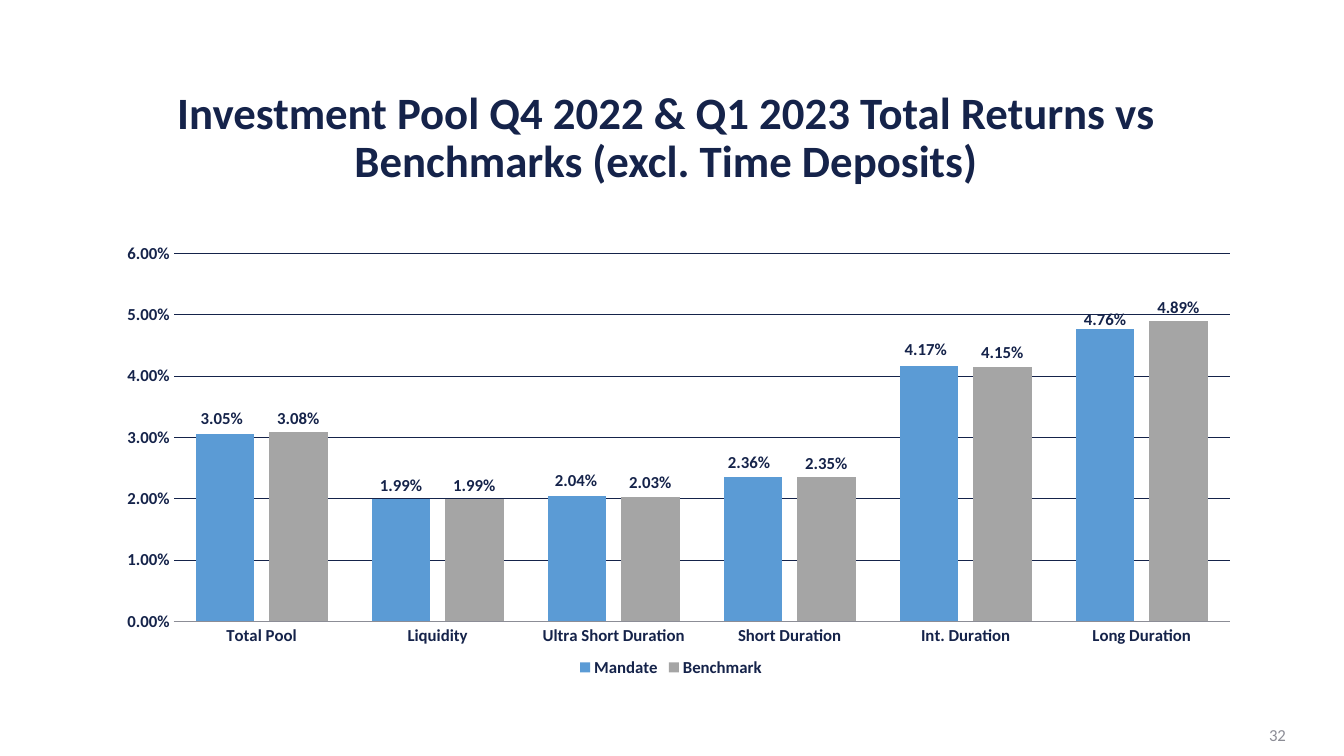
from dataclasses import dataclass

import lxml.etree
import pptx
import pptx.chart.data
import pptx.dml.color
import pptx.enum.chart
import pptx.enum.text
import pptx.oxml
import pptx.oxml.ns
import pptx.util

Cm = pptx.util.Cm
Pt = pptx.util.Pt


@dataclass(frozen=True)
class Theme:
    font: str = "Calibri"
    navy: str = "15234A"
    grey: str = "8C8D96"
    blue: str = "5B9BD5"
    silver: str = "A5A5A5"
    title_size: int = 32
    small_size: int = 12
    hairline: float = 0.5
    percent: str = "0.00%"


@dataclass(frozen=True)
class Box:
    left: float
    top: float
    width: float
    height: float

    def lengths(self):
        return Cm(self.left), Cm(self.top), Cm(self.width), Cm(self.height)


@dataclass(frozen=True)
class ReturnSeries:
    name: str
    color: str
    percents: tuple[float, ...]
    label_shifts: tuple[tuple[float, float], ...] = ()


THEME = Theme()
TITLE_BOX = Box(1.65, 1.91, 30.28, 3.18)
CHART_BOX = Box(2.57, 5.08, 28.68, 12.09)
NUMBER_BOX = Box(25.04, 18, 7.62, 1.02)
PLOT_AREA = {"x": 0.063, "y": 0.108, "w": 0.928, "h": 0.767}

MANDATES = ("Total Pool", "Liquidity", "Ultra Short Duration",
            "Short Duration", "Int. Duration", "Long Duration")
RETURNS = (
    ReturnSeries("Mandate", THEME.blue, (3.05, 1.99, 2.04, 2.36, 4.17, 4.76),
                 ((-0.08, -0.03), (0, 0), (-0.03, -0.03),
                  (-0.1, 0), (-0.08, -0.05), (0, 0.1))),
    ReturnSeries("Benchmark", THEME.silver, (3.08, 1.99, 2.03, 2.35, 4.15, 4.89)),
)


def rgb(color: str) -> pptx.dml.color.RGBColor:
    return pptx.dml.color.RGBColor.from_string(color)


def style_font(font, size: int, color: str, bold: bool) -> None:
    font.name = THEME.font
    font.size = Pt(size)
    font.bold = bold
    font.color.rgb = rgb(color)


def style_line(line, color: str) -> None:
    line.color.rgb = rgb(color)
    line.width = Pt(THEME.hairline)


def fill_text(shape, box: Box, text: str, size: int, color: str, bold: bool,
              alignment, line_spacing: float) -> None:
    shape.left, shape.top, shape.width, shape.height = box.lengths()
    frame = shape.text_frame
    frame.text = text
    frame.word_wrap = True
    frame.auto_size = pptx.enum.text.MSO_AUTO_SIZE.NONE
    frame.vertical_anchor = pptx.enum.text.MSO_ANCHOR.MIDDLE
    paragraph = frame.paragraphs[0]
    paragraph.alignment = alignment
    paragraph.line_spacing = line_spacing
    style_font(paragraph.runs[0].font, size, color, bold)


def manual_layout(values: dict[str, float], inner: bool = False):
    layout = pptx.oxml.parse_xml(
        f'<c:layout {pptx.oxml.ns.nsdecls("c")}><c:manualLayout/></c:layout>')
    settings = {"layoutTarget": "inner", "xMode": "edge", "yMode": "edge"} if inner else {}
    for tag, value in {**settings, **values}.items():
        item = lxml.etree.SubElement(layout[0], pptx.oxml.ns.qn(f"c:{tag}"))
        item.set("val", str(value))
    return layout


def style_series(series, returns: ReturnSeries) -> None:
    series.format.fill.solid()
    series.format.fill.fore_color.rgb = rgb(returns.color)
    series.invert_if_negative = False
    outside = pptx.enum.chart.XL_LABEL_POSITION.OUTSIDE_END
    labels = series.data_labels
    labels.show_value = True
    labels.number_format = THEME.percent
    labels.number_format_is_linked = False
    labels.position = outside
    style_font(labels.font, THEME.small_size, THEME.navy, True)
    for index, (right, down) in enumerate(returns.label_shifts):
        label = series.points[index].data_label
        style_font(label.font, THEME.small_size, THEME.navy, True)
        label.position = outside
        shift = manual_layout({"x": round(right / CHART_BOX.width, 4),
                               "y": round(down / CHART_BOX.height, 4)})
        point_labels = series._element.findall(".//" + pptx.oxml.ns.qn("c:dLbl"))
        point_labels[index].insert(1, shift)


def style_axes(chart) -> None:
    for axis in (chart.category_axis, chart.value_axis):
        axis.major_tick_mark = pptx.enum.chart.XL_TICK_MARK.NONE
        axis.minor_tick_mark = pptx.enum.chart.XL_TICK_MARK.NONE
        style_font(axis.tick_labels.font, THEME.small_size, THEME.navy, True)
    style_line(chart.category_axis.format.line, THEME.grey)
    scale = chart.value_axis
    scale.minimum_scale = 0
    scale.maximum_scale = 0.06
    scale.major_unit = 0.01
    scale.tick_labels.number_format = THEME.percent
    scale.tick_labels.number_format_is_linked = False
    scale.format.line.fill.background()
    style_line(scale.major_gridlines.format.line, THEME.navy)


def add_returns_chart(slide) -> None:
    data = pptx.chart.data.CategoryChartData(number_format=THEME.percent)
    data.categories = MANDATES
    for returns in RETURNS:
        data.add_series(returns.name, [round(value / 100, 4) for value in returns.percents])
    chart = slide.shapes.add_chart(
        pptx.enum.chart.XL_CHART_TYPE.COLUMN_CLUSTERED, *CHART_BOX.lengths(), data).chart
    chart.has_title = False
    style_font(chart.font, THEME.small_size, THEME.navy, True)
    chart.has_legend = True
    chart.legend.position = pptx.enum.chart.XL_LEGEND_POSITION.BOTTOM
    chart.legend.include_in_layout = False
    style_font(chart.legend.font, THEME.small_size, THEME.navy, True)

    plot = chart.plots[0]
    plot.gap_width = 75
    plot.overlap = -25
    plot.vary_by_categories = False
    for series, returns in zip(plot.series, RETURNS):
        style_series(series, returns)
    style_axes(chart)

    plot_area = chart._chartSpace.find(".//" + pptx.oxml.ns.qn("c:plotArea"))
    for automatic in plot_area.findall(pptx.oxml.ns.qn("c:layout")):
        plot_area.remove(automatic)
    plot_area.insert(0, manual_layout(PLOT_AREA, inner=True))


def main() -> None:
    presentation = pptx.Presentation()
    presentation.slide_width = Cm(33.87)
    presentation.slide_height = Cm(19.05)
    slide = presentation.slides.add_slide(presentation.slide_layouts[5])
    fill_text(slide.shapes.title, TITLE_BOX,
              "Investment Pool Q4 2022 & Q1 2023 Total Returns vs "
              "Benchmarks (excl. Time Deposits)",
              THEME.title_size, THEME.navy, True,
              pptx.enum.text.PP_ALIGN.CENTER, 0.9)
    add_returns_chart(slide)
    fill_text(slide.shapes.add_textbox(*NUMBER_BOX.lengths()), NUMBER_BOX, "32",
              THEME.small_size, THEME.grey, False,
              pptx.enum.text.PP_ALIGN.RIGHT, 1.0)
    presentation.save("out.pptx")


if __name__ == "__main__":
    main()
